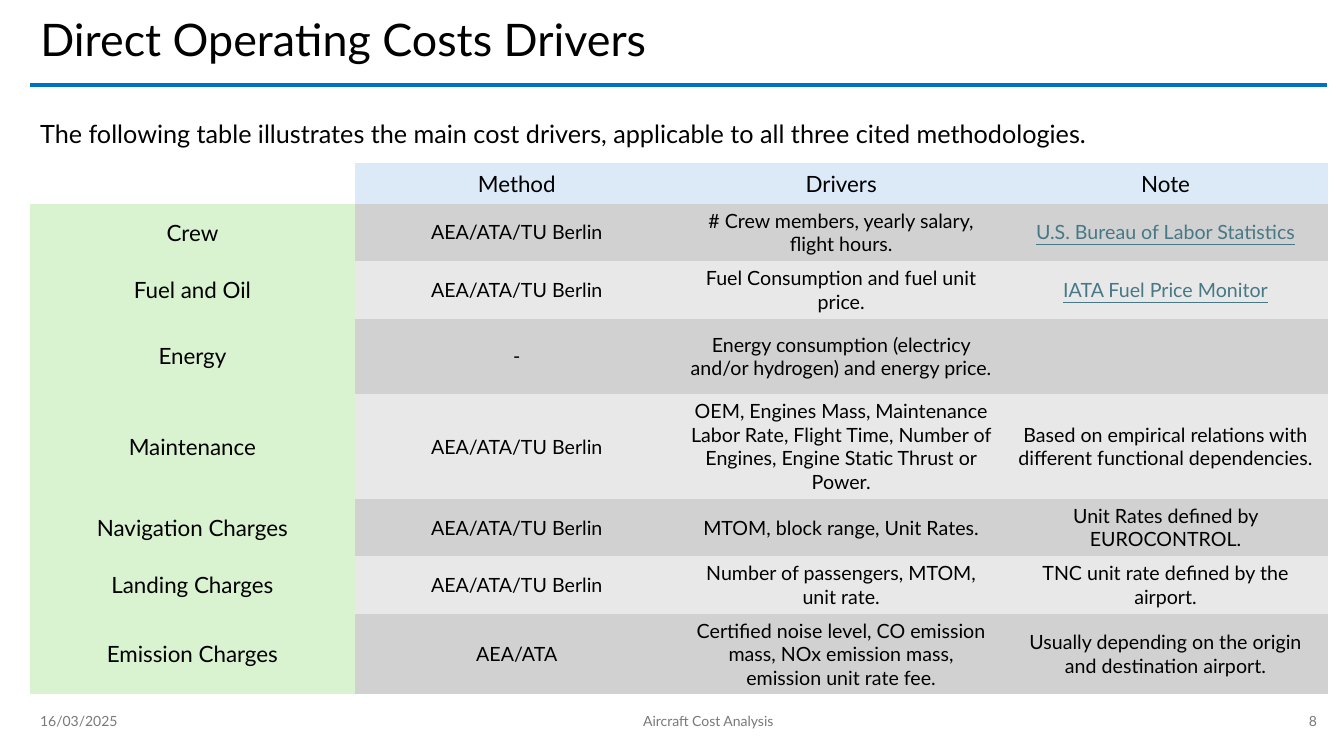
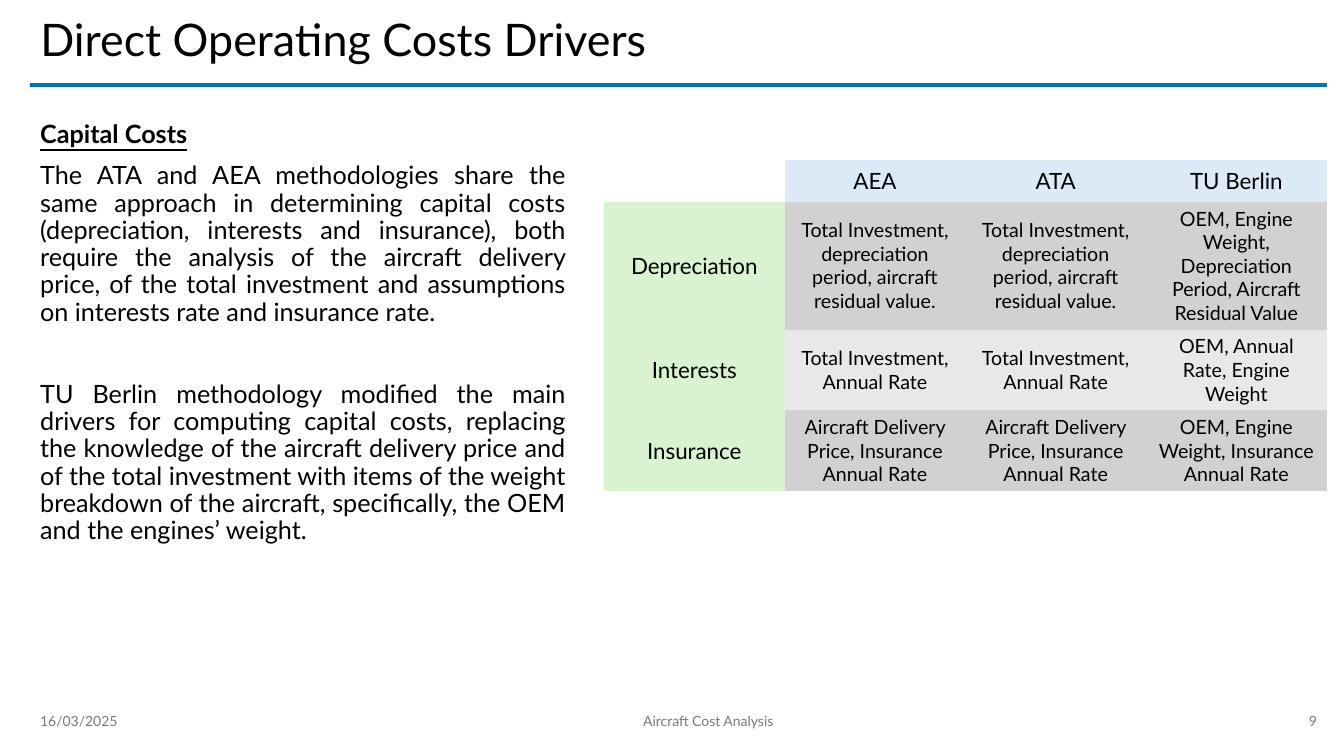
from lxml.etree import SubElement
from pptx import Presentation
from pptx.dml.color import RGBColor
from pptx.enum.shapes import MSO_CONNECTOR
from pptx.enum.text import MSO_ANCHOR, MSO_AUTO_SIZE, PP_ALIGN
from pptx.oxml.ns import qn
from pptx.util import Inches, Pt

FONT = "Lato"
BLACK = RGBColor(0x00, 0x00, 0x00)
WHITE = RGBColor(0xFF, 0xFF, 0xFF)
RULE_BLUE = RGBColor(0x00, 0x70, 0xC0)
FOOTER_GREY = RGBColor(0x79, 0x79, 0x79)
SOURCE_TEAL = RGBColor(0x46, 0x78, 0x86)
HEADER_BLUE = RGBColor(0xDC, 0xEA, 0xF7)
LABEL_GREEN = RGBColor(0xD9, 0xF2, 0xD0)
STRIPES = (RGBColor(0xE8, 0xE8, 0xE8), RGBColor(0xD1, 0xD1, 0xD1))
PLAIN_TABLE_STYLE = "{2D5ABB26-0587-4C30-8999-92F81FD0307C}"

LEFT, RIGHT = 0.3, 13.16
TITLE = "Direct Operating Costs Drivers"
ALL_METHODS = "AEA/ATA/TU Berlin"
SOURCES = ("U.S. Bureau of Labor Statistics", "IATA Fuel Price Monitor")
DRIVER_ROWS = [
    ("", "Method", "Drivers", "Note"),
    ("Crew", ALL_METHODS, "# Crew members, yearly salary, flight hours.", SOURCES[0]),
    ("Fuel and Oil", ALL_METHODS, "Fuel Consumption and fuel unit price.", SOURCES[1]),
    ("Energy", "-", "Energy consumption (electricy and/or hydrogen) and energy price.", ""),
    ("Maintenance", ALL_METHODS,
     "OEM, Engines Mass, Maintenance Labor Rate, Flight Time, Number of Engines, "
     "Engine Static Thrust or Power.",
     "Based on empirical relations with different functional dependencies."),
    ("Navigation Charges", ALL_METHODS, "MTOM, block range, Unit Rates.",
     "Unit Rates defined by EUROCONTROL."),
    ("Landing Charges", ALL_METHODS, "Number of passengers, MTOM, unit rate.",
     "TNC unit rate defined by the airport."),
    ("Emission Charges", "AEA/ATA",
     "Certified noise level, CO emission mass, NOx emission mass, emission unit rate fee.",
     "Usually depending on the origin and destination airport."),
]
DRIVER_HEIGHTS = (0.37, 0.57, 0.57, 0.75, 1.04, 0.57, 0.57, 0.8)

DEPRECIATION = "Total Investment, depreciation period, aircraft residual value."
INTERESTS = "Total Investment, Annual Rate"
INSURANCE = "Aircraft Delivery Price, Insurance Annual Rate"
CAPITAL_ROWS = [
    ("", "AEA", "ATA", "TU Berlin"),
    ("Depreciation", DEPRECIATION, DEPRECIATION,
     "OEM, Engine Weight, Depreciation Period, Aircraft Residual Value"),
    ("Interests", INTERESTS, INTERESTS, "OEM, Annual Rate, Engine Weight"),
    ("Insurance", INSURANCE, INSURANCE, "OEM, Engine Weight, Insurance Annual Rate"),
]
CAPITAL_HEIGHTS = (0.41, 1.27, 0.8, 0.8)

INTRODUCTION = ("The following table illustrates the main cost drivers, "
                "applicable to all three cited methodologies.")
SHARED_APPROACH = (
    "The ATA and AEA methodologies share the same approach in determining capital costs "
    "(depreciation, interests and insurance), both require the analysis of the aircraft "
    "delivery price, of the total investment and assumptions on interests rate and "
    "insurance rate.")
BERLIN_APPROACH = (
    "TU Berlin methodology modified the main drivers for computing capital costs, replacing "
    "the knowledge of the aircraft delivery price and of the total investment with items of "
    "the weight breakdown of the aircraft, specifically, the OEM and the engines’ weight.")


def add_text(paragraph, text, size, color=BLACK, bold=False, underline=False):
    """Append one formatted run to a paragraph."""
    run = paragraph.add_run()
    run.text = text
    font = run.font
    font.name, font.size, font.bold, font.underline = FONT, Pt(size), bold, underline
    font.color.rgb = color


def add_box(slide, left, top, width, height, anchor=MSO_ANCHOR.TOP):
    """Add a wrapping text box and return its text frame."""
    shape = slide.shapes.add_textbox(Inches(left), Inches(top), Inches(width), Inches(height))
    frame = shape.text_frame
    frame.word_wrap = True
    frame.vertical_anchor = anchor
    return frame


def add_title(slide):
    """Place and format the title placeholder."""
    title = slide.shapes.title
    title.left, title.top = Inches(LEFT), Inches(0.05)
    title.width, title.height = Inches(11.38), Inches(0.74)
    frame = title.text_frame
    frame.auto_size = MSO_AUTO_SIZE.NONE
    frame.vertical_anchor = MSO_ANCHOR.MIDDLE
    paragraph = frame.paragraphs[0]
    paragraph.alignment = PP_ALIGN.LEFT
    paragraph.line_spacing = 0.9
    add_text(paragraph, TITLE, 32)


def add_title_rule(slide):
    """Draw the blue line below the title."""
    line = slide.shapes.add_connector(
        MSO_CONNECTOR.STRAIGHT, Inches(LEFT), Inches(0.84), Inches(RIGHT), Inches(0.84))
    line.line.color.rgb = RULE_BLUE
    line.line.width = Pt(3)
    SubElement(line._element.spPr, qn("a:effectLst"))


def add_footer(slide, number):
    """Write the date, the presentation name and the slide number."""
    for text, left, width, alignment in (
            ("16/03/2025", LEFT, 1.12, PP_ALIGN.LEFT),
            ("Aircraft Cost Analysis", 1.51, 11.03, PP_ALIGN.CENTER),
            (str(number), 12.65, 0.51, PP_ALIGN.RIGHT)):
        paragraph = add_box(slide, left, 6.95, width, 0.4, MSO_ANCHOR.MIDDLE).paragraphs[0]
        paragraph.alignment = alignment
        add_text(paragraph, text, 10, FOOTER_GREY)


def add_content_slide(presentation, number):
    """Add a slide with the shared title, rule and footer."""
    slide = presentation.slides.add_slide(presentation.slide_layouts[5])
    slide.background.fill.solid()
    slide.background.fill.fore_color.rgb = WHITE
    add_title(slide)
    add_title_rule(slide)
    add_footer(slide, number)
    return slide


def add_body(slide, width, height, paragraphs):
    """Write justified paragraphs given as text, space before and heading flag."""
    frame = add_box(slide, LEFT, 1.16, width, height)
    for index, (text, space, heading) in enumerate(paragraphs):
        paragraph = frame.add_paragraph() if index else frame.paragraphs[0]
        paragraph.alignment = PP_ALIGN.JUSTIFY
        paragraph.line_spacing = 0.9
        paragraph.space_before = Pt(space)
        add_text(paragraph, text, 18, bold=heading, underline=heading)


def fill_cell(cell, row, column, text):
    """Colour and write one cell according to its place in the table."""
    if row == 0 and column == 0:
        cell.fill.background()
    else:
        cell.fill.solid()
        cell.fill.fore_color.rgb = (
            HEADER_BLUE if row == 0 else LABEL_GREEN if column == 0 else STRIPES[row % 2])
    cell.vertical_anchor = MSO_ANCHOR.MIDDLE
    paragraph = cell.text_frame.paragraphs[0]
    paragraph.alignment = PP_ALIGN.CENTER
    is_source = text in SOURCES
    add_text(paragraph, text, 16 if row == 0 or column == 0 else 14,
             SOURCE_TEAL if is_source else BLACK, underline=is_source)


def add_cost_table(slide, left, top, width, rows, heights):
    """Add a table with equal columns, a header row and a label column."""
    graphic = slide.shapes.add_table(
        len(rows), len(rows[0]), Inches(left), Inches(top), Inches(width), Inches(sum(heights)))
    graphic._element.xpath(".//a:tableStyleId")[0].text = PLAIN_TABLE_STYLE
    table = graphic.table
    for row, (texts, height) in enumerate(zip(rows, heights)):
        table.rows[row].height = Inches(height)
        for column, text in enumerate(texts):
            fill_cell(table.cell(row, column), row, column, text)


def main():
    """Build both slides and save the presentation."""
    presentation = Presentation()
    presentation.slide_width, presentation.slide_height = Inches(13.33), Inches(7.5)

    drivers = add_content_slide(presentation, 8)
    add_body(drivers, 11.83, 0.4, [(INTRODUCTION, 0, False)])
    add_cost_table(drivers, LEFT, 1.62, 12.87, DRIVER_ROWS, DRIVER_HEIGHTS)

    capital = add_content_slide(presentation, 9)
    add_body(capital, 5.41, 5.59, [
        ("Capital Costs", 0, True),
        (SHARED_APPROACH, 10, False),
        (BERLIN_APPROACH, 39.5, False),
    ])
    add_cost_table(capital, 5.99, 1.59, 7.17, CAPITAL_ROWS, CAPITAL_HEIGHTS)

    presentation.save("out.pptx")


if __name__ == "__main__":
    main()
